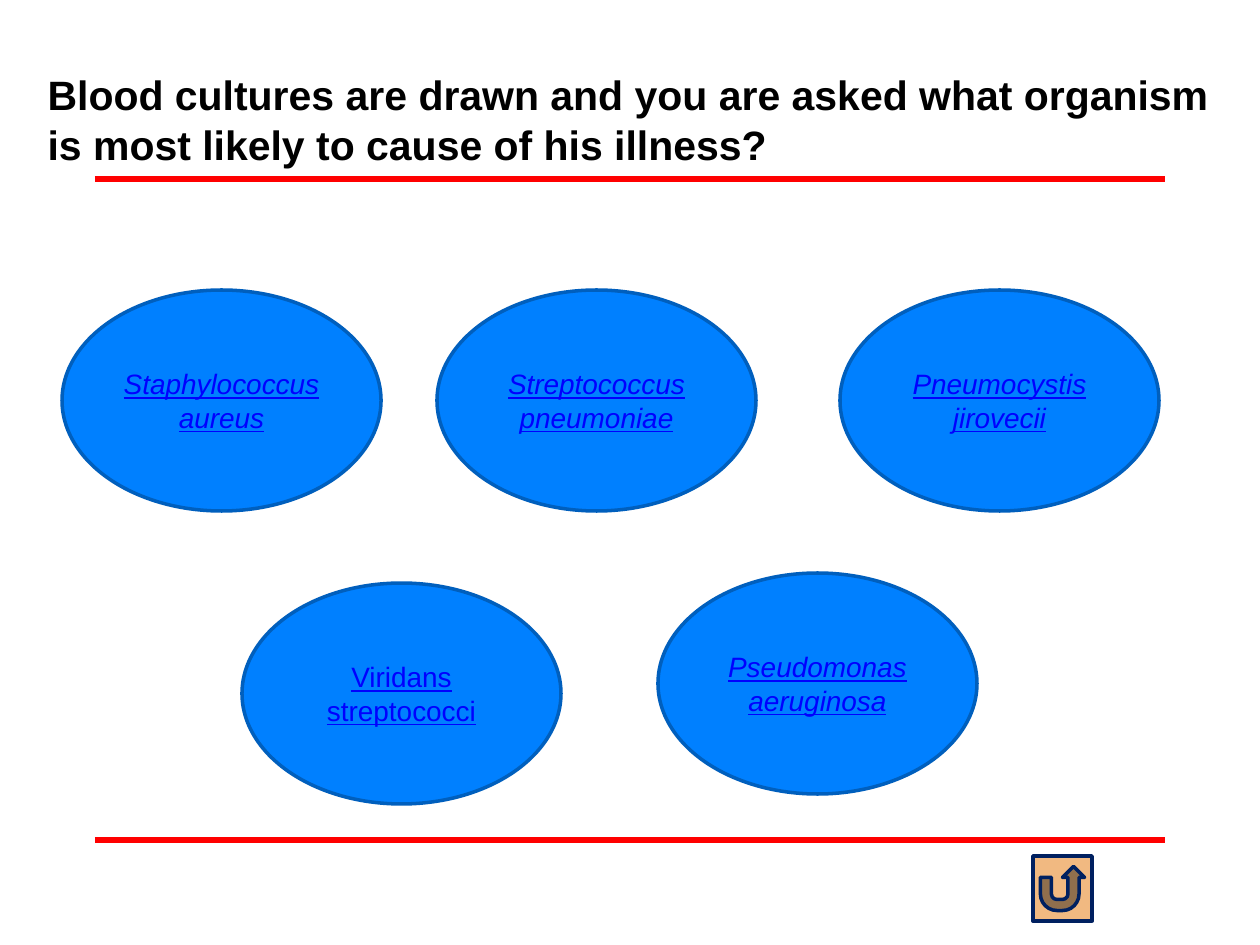
"""Build the quiz slide on the likely organism in blood cultures."""
from dataclasses import dataclass

from lxml.etree import SubElement
from pptx import Presentation
from pptx.dml.color import RGBColor
from pptx.enum.shapes import MSO_CONNECTOR, MSO_SHAPE
from pptx.enum.text import MSO_ANCHOR, MSO_AUTO_SIZE, PP_ALIGN
from pptx.oxml.ns import qn
from pptx.util import Emu, Pt

EMU_PER_PX = 914400 / 126
OVAL_WIDTH, OVAL_HEIGHT = 319, 221
TOP_ROW = 290


@dataclass(frozen=True)
class Answer:
    left: int
    top: int
    text: str
    italic: bool = True


ANSWERS = (
    Answer(62, TOP_ROW, "Staphylococcus aureus"),
    Answer(242, 583, "Viridans streptococci", italic=False),
    Answer(437, TOP_ROW, "Streptococcus pneumoniae"),
    Answer(658, 573, "Pseudomonas\naeruginosa"),
    Answer(840, TOP_ROW, "Pneumocystis jirovecii"),
)
RULE_TOPS = (179, 840)


def px(value: int) -> Emu:
    return Emu(round(value * EMU_PER_PX))


def color(value: str) -> RGBColor:
    return RGBColor.from_string(value)


def write_text(shape, text: str, *, size: float, fill: str, align=PP_ALIGN.LEFT,
               anchor=MSO_ANCHOR.MIDDLE, bold=False, italic=False,
               underline=False, line_spacing=None) -> None:
    frame = shape.text_frame
    frame.word_wrap = True
    frame.auto_size = MSO_AUTO_SIZE.NONE
    frame.vertical_anchor = anchor
    frame.text = text
    for paragraph in frame.paragraphs:
        paragraph.alignment = align
        paragraph.line_spacing = line_spacing
        for run in paragraph.runs:
            font = run.font
            font.name, font.size = "Arial", Pt(size)
            font.bold, font.italic, font.underline = bold, italic, underline
            font.color.rgb = color(fill)


def add_rule(slide, top: int) -> None:
    rule = slide.shapes.add_connector(
        MSO_CONNECTOR.STRAIGHT, px(95), px(top), px(1165), px(top))
    rule.line.color.rgb = color("FF0000")
    rule.line.width = Pt(3)
    SubElement(rule._element.spPr, qn("a:effectLst"))


def add_shape(slide, kind, left: int, top: int, width: int, height: int,
              fill: str, line: str):
    shape = slide.shapes.add_shape(kind, px(left), px(top), px(width), px(height))
    shape.shadow.inherit = False
    shape.fill.solid()
    shape.fill.fore_color.rgb = color(fill)
    shape.line.color.rgb = color(line)
    shape.line.width = Pt(2)
    return shape


def add_answer(slide, answer: Answer) -> None:
    oval = add_shape(slide, MSO_SHAPE.OVAL, answer.left, answer.top,
                     OVAL_WIDTH, OVAL_HEIGHT, "0080FF", "005FBD")
    write_text(oval, answer.text, size=16, fill="0000FF", align=PP_ALIGN.CENTER,
               italic=answer.italic, underline=True)


def place_title(slide, text: str) -> None:
    title = slide.shapes.title
    title.left, title.top, title.width, title.height = map(px, (35, 69, 1207, 157))
    write_text(title, text, size=23.4, fill="000000", bold=True,
               anchor=MSO_ANCHOR.BOTTOM, line_spacing=Pt(28.5))
    title.text_frame.margin_bottom = px(57)


def main() -> None:
    presentation = Presentation()
    presentation.slide_width, presentation.slide_height = px(1260), px(945)
    slide = presentation.slides.add_slide(presentation.slide_layouts[5])
    place_title(slide, "Blood cultures are drawn and you are asked what organism "
                       "is most likely to cause of his illness?")
    for top in RULE_TOPS:
        add_rule(slide, top)
    for answer in ANSWERS:
        add_answer(slide, answer)
    add_shape(slide, MSO_SHAPE.ACTION_BUTTON_RETURN, 1033, 856, 59, 65,
              "F1B981", "002060")
    presentation.save("out.pptx")


if __name__ == "__main__":
    main()
